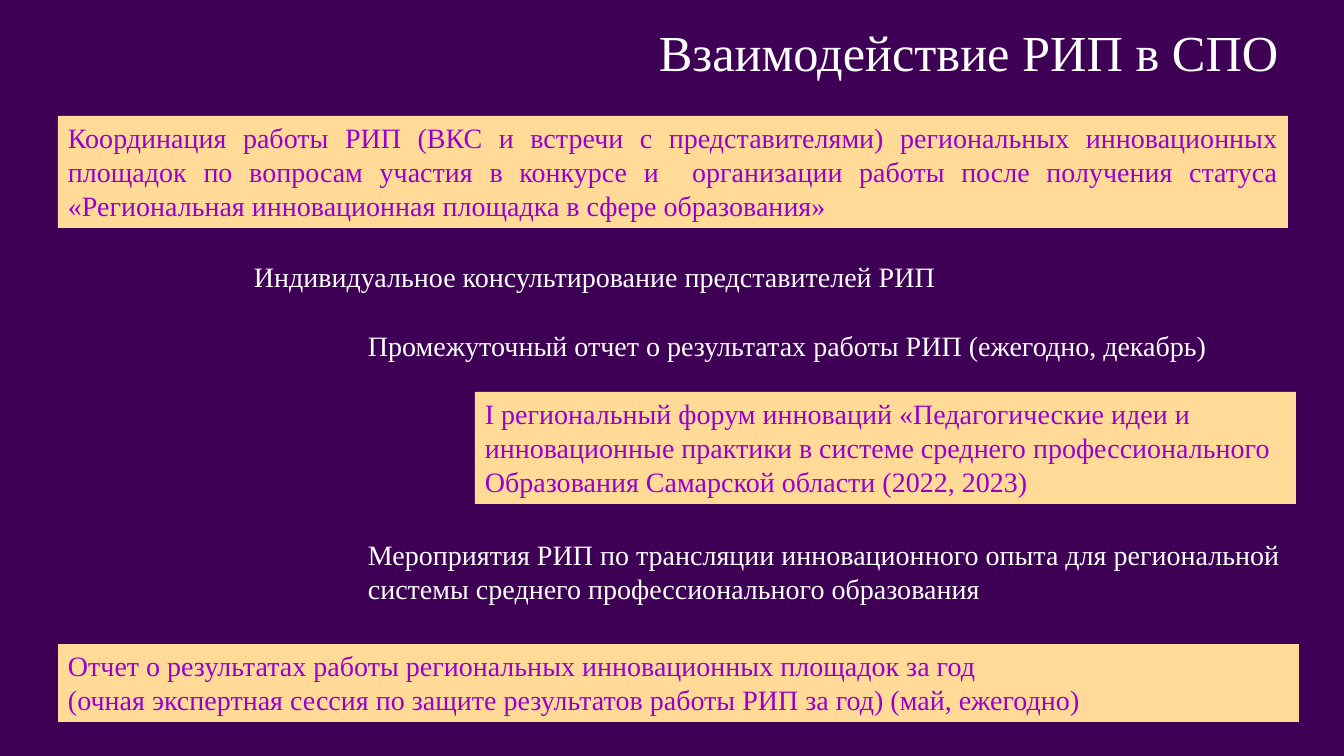
import pptx
import pptx.util
from pptx.dml.color import RGBColor
from pptx.enum.shapes import MSO_SHAPE
from pptx.enum.text import MSO_ANCHOR, MSO_AUTO_SIZE, PP_ALIGN

COLORS = {"background": "3E0054", "panel": "FFDB97", "accent": "9900CC", "light": "FFFFFF"}
FONT = "Times New Roman"
SLIDE_WIDTH, SLIDE_HEIGHT = 1344, 756
EMU_PER_PX = 914400 / 100.8

TITLE = ("Взаимодействие РИП в СПО", (649, 16, 646, 72))

STEPS = [
    {"box": (58, 116, 1230, 112), "panel": True, "wrap": True, "lines": [
        "Координация работы РИП (ВКС и встречи с представителями) региональных "
        "инновационных площадок по вопросам участия в конкурсе и  организации работы "
        "после получения статуса «Региональная инновационная площадка в сфере образования»"]},
    {"box": (244, 255, 709, 44), "panel": False, "wrap": False, "lines": [
        "Индивидуальное консультирование представителей РИП"]},
    {"box": (358, 324, 873, 44), "panel": False, "wrap": False, "lines": [
        "Промежуточный отчет о результатах работы РИП (ежегодно, декабрь) "]},
    {"box": (475, 392, 821, 112), "panel": True, "wrap": False, "lines": [
        "I региональный форум инноваций «Педагогические идеи и ",
        "инновационные практики в системе среднего профессионального ",
        "Образования Самарской области (2022, 2023)"]},
    {"box": (358, 533, 941, 78), "panel": False, "wrap": False, "lines": [
        "Мероприятия РИП по трансляции инновационного опыта для региональной",
        "системы среднего профессионального образования"]},
    {"box": (58, 644, 1241, 78), "panel": True, "wrap": True, "lines": [
        "Отчет о результатах работы региональных инновационных площадок за год",
        "(очная экспертная сессия по защите результатов работы РИП за год) (май, ежегодно)"]},
]


def px(value):
    return pptx.util.Emu(round(value * EMU_PER_PX))


def color(name):
    return RGBColor.from_string(COLORS[name])


def add_block(slide, box, lines, size, alignment, panel=False, wrap=False):
    place = [px(value) for value in box]
    if panel:
        shape = slide.shapes.add_shape(MSO_SHAPE.RECTANGLE, *place)
        shape.shadow.inherit = False
        shape.fill.solid()
        shape.fill.fore_color.rgb = color("panel")
        shape.line.fill.background()
    else:
        shape = slide.shapes.add_textbox(*place)
    text_frame = shape.text_frame
    text_frame.text = "\n".join(lines)
    text_frame.word_wrap = wrap
    text_frame.auto_size = MSO_AUTO_SIZE.SHAPE_TO_FIT_TEXT
    text_frame.vertical_anchor = MSO_ANCHOR.TOP
    for paragraph in text_frame.paragraphs:
        paragraph.alignment = alignment
        for run in paragraph.runs:
            run.font.name = FONT
            run.font.size = pptx.util.Pt(size)
            run.font.color.rgb = color("accent" if panel else "light")


def main():
    presentation = pptx.Presentation()
    presentation.slide_width = px(SLIDE_WIDTH)
    presentation.slide_height = px(SLIDE_HEIGHT)
    slide = presentation.slides.add_slide(presentation.slide_layouts[6])
    slide.background.fill.solid()
    slide.background.fill.fore_color.rgb = color("background")

    title, title_box = TITLE
    add_block(slide, title_box, [title], 36, PP_ALIGN.LEFT)
    for step in STEPS:
        add_block(slide, step["box"], step["lines"], 20, PP_ALIGN.JUSTIFY,
                  step["panel"], step["wrap"])
    presentation.save("out.pptx")


if __name__ == "__main__":
    main()
